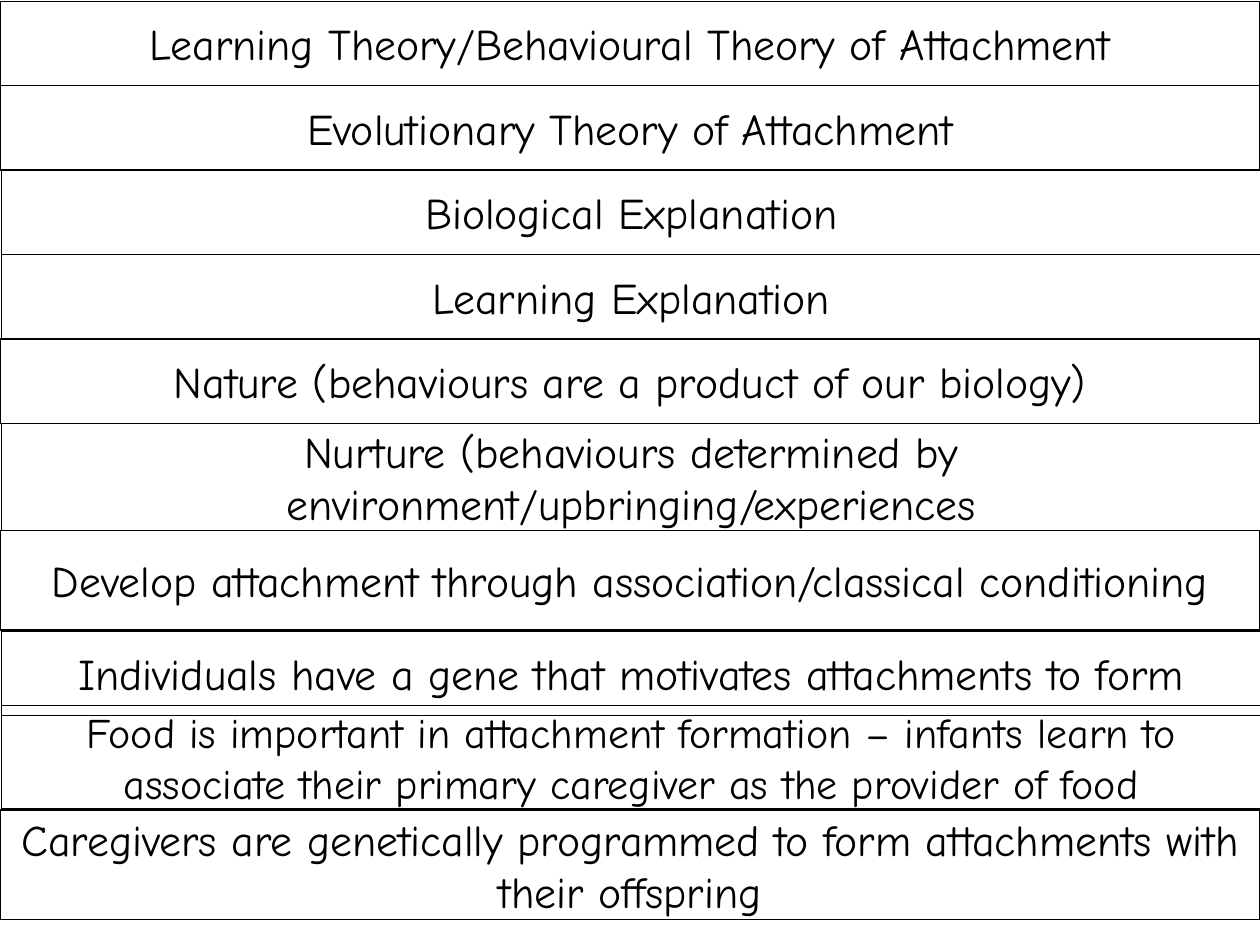
from dataclasses import dataclass

from pptx import Presentation
from pptx.dml.color import RGBColor
from pptx.enum.text import MSO_ANCHOR, PP_ALIGN
from pptx.util import Inches, Pt

CENTER = PP_ALIGN.CENTER
MIDDLE = MSO_ANCHOR.MIDDLE
BLANK_LAYOUT = 6


@dataclass(frozen=True)
class Theme:
    font: str = "Comic Neue"
    ink: RGBColor = RGBColor(0, 0, 0)
    border: float = 0.75
    normal: float = 25
    small: float = 24


THEME = Theme()
WIDTH, HEIGHT = 10, 7.5
ROW = 0.67
TOP = 0.01
NUDGE = 0.01

# Statement, left, top, height, type size
EVEN_ROWS = [
    (text, left, TOP + index * ROW, ROW, THEME.normal)
    for index, (text, left) in enumerate([
        ("Learning Theory/Behavioural Theory of Attachment", 0),
        ("Evolutionary Theory of Attachment", 0),
        ("Biological Explanation", NUDGE),
        ("Learning Explanation", NUDGE),
        ("Nature (behaviours are a product of our biology)", 0),
    ])
]
UNEVEN_ROWS = [
    ("Nurture (behaviours determined by environment/upbringing/experiences",
     NUDGE, 3.36, 0.85, THEME.normal),
    ("Develop attachment through association/classical conditioning",
     0, 4.21, 0.79, THEME.normal),
    ("Individuals have a gene that motivates attachments to form",
     NUDGE, 5.01, ROW, THEME.normal),
    ("Food is important in attachment formation – infants learn to "
     "associate their primary caregiver as the provider of food",
     NUDGE, 5.6, 0.82, THEME.small),
    ("Caregivers are genetically programmed to form attachments with "
     "their offspring", 0, 6.43, 0.87, THEME.normal),
]


def add_statement(slide, text, left, top, width, height, size):
    """Add one outlined strip with its statement centred inside."""
    shape = slide.shapes.add_textbox(
        Inches(left), Inches(top), Inches(width), Inches(height))
    shape.line.color.rgb = THEME.ink
    shape.line.width = Pt(THEME.border)
    frame = shape.text_frame
    frame.word_wrap = True
    frame.vertical_anchor = MIDDLE
    paragraph = frame.paragraphs[0]
    paragraph.alignment = CENTER
    run = paragraph.add_run()
    run.text = text
    for name, value in {"name": THEME.font, "size": Pt(size)}.items():
        setattr(run.font, name, value)
    run.font.color.rgb = THEME.ink


def build_statement_slide(presentation):
    slide = presentation.slides.add_slide(
        presentation.slide_layouts[BLANK_LAYOUT])
    for text, left, top, height, size in EVEN_ROWS + UNEVEN_ROWS:
        add_statement(slide, text, left, top, WIDTH, height, size)


def main():
    presentation = Presentation()
    presentation.slide_width = Inches(WIDTH)
    presentation.slide_height = Inches(HEIGHT)
    build_statement_slide(presentation)
    presentation.save("out.pptx")


if __name__ == "__main__":
    main()
